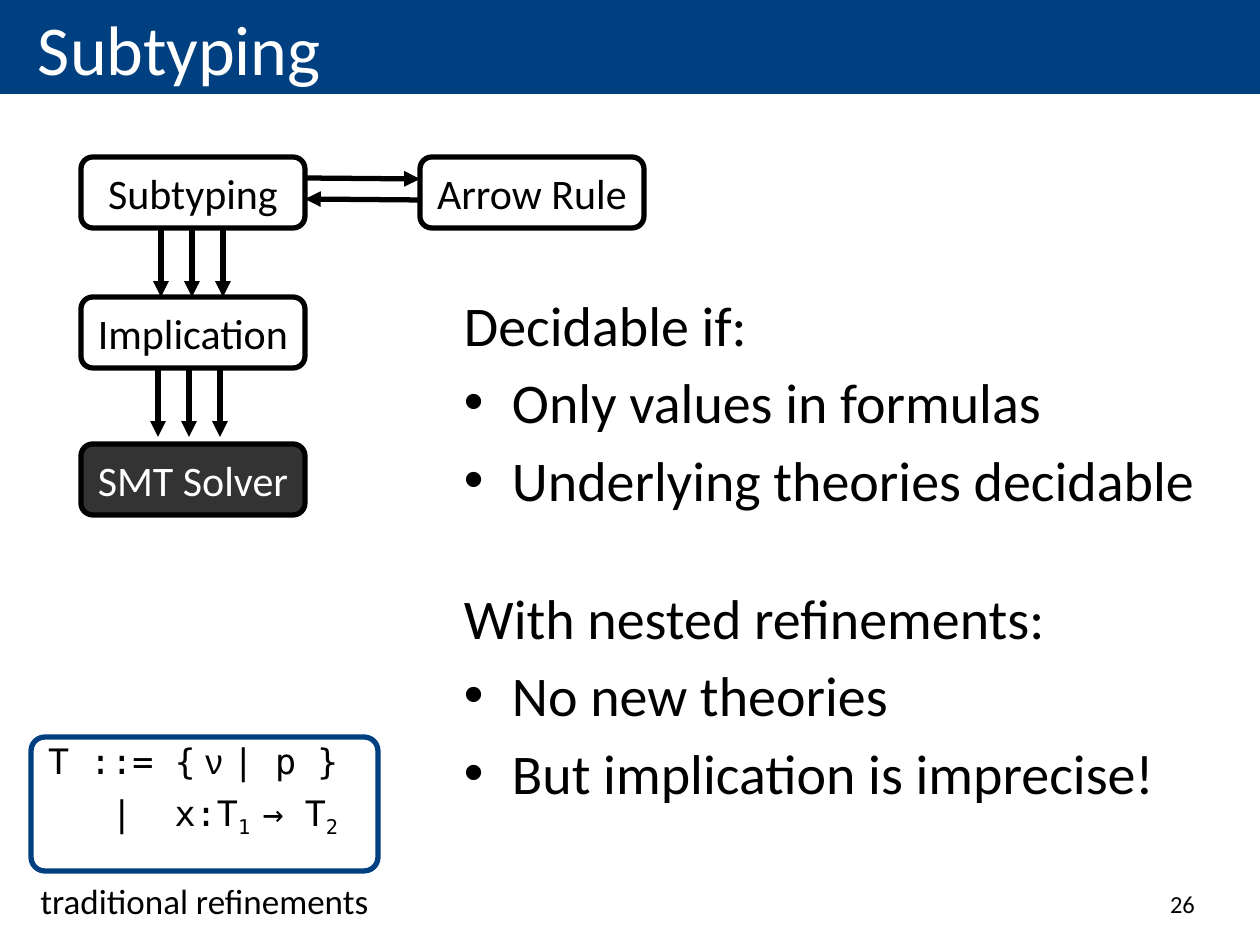
from dataclasses import dataclass

from lxml.etree import SubElement
from pptx import Presentation
from pptx.dml.color import RGBColor as Rgb
from pptx.enum.shapes import MSO_CONNECTOR as Connector, MSO_SHAPE as Shape
from pptx.enum.text import MSO_ANCHOR as Anchor, MSO_AUTO_SIZE as AutoSize, PP_ALIGN as Align
from pptx.oxml.ns import qn
from pptx.util import Emu, Pt

PX_PER_INCH = 126


@dataclass(frozen=True)
class Theme:
    navy: Rgb = Rgb(0x00, 0x40, 0x80)
    black: Rgb = Rgb(0, 0, 0)
    white: Rgb = Rgb(255, 255, 255)
    charcoal: Rgb = Rgb(0x33, 0x33, 0x33)
    sans: str = "Calibri"
    mono: str = "DejaVu Sans Mono"
    symbol: str = "Arial"
    title: int = 40
    body: int = 32
    node: int = 24
    small: int = 20
    number: int = 14
    stroke: int = 3


THEME = Theme()
NODE_WIDTH, NODE_HEIGHT = 224, 71
HANGING = 48


def px(length):
    return Emu(round(length * 914400 / PX_PER_INCH))


def add_span(para, text, size, color=THEME.black, font=THEME.sans, subscript=False):
    span = para.add_run()
    span.text = text
    span.font.size = Pt(size)
    span.font.name = font
    span.font.color.rgb = color
    if subscript:
        span.font._element.set("baseline", "-25000")


def set_frame(frame, anchor=Anchor.TOP, insets=(13, 6, 13, 6), wrap=True):
    frame.auto_size = AutoSize.NONE
    frame.word_wrap = wrap
    frame.vertical_anchor = anchor
    (frame.margin_left, frame.margin_top,
     frame.margin_right, frame.margin_bottom) = map(px, insets)
    return frame


def add_text_box(page, left, top, width, height, **layout):
    box = page.shapes.add_textbox(*map(px, (left, top, width, height)))
    return set_frame(box.text_frame, **layout)


def add_title(page, text):
    title = page.shapes.title
    title.left, title.top, title.width, title.height = map(px, (0, 0, 1260, 94))
    title.fill.solid()
    title.fill.fore_color.rgb = THEME.navy
    para = set_frame(title.text_frame, Anchor.MIDDLE, (38, 6, 13, 6)).paragraphs[0]
    para.alignment = Align.LEFT
    add_span(para, text, THEME.title, THEME.white)


def add_rounded_box(page, left, top, width, height, line, fill=None, corner=0.167):
    box = page.shapes.add_shape(Shape.ROUNDED_RECTANGLE, *map(px, (left, top, width, height)))
    box.shadow.inherit = False
    box.adjustments[0] = corner
    box.line.color.rgb = line
    box.line.width = Pt(THEME.stroke)
    if fill is None:
        box.fill.background()
    else:
        box.fill.solid()
        box.fill.fore_color.rgb = fill
    return box


def add_node(page, text, left, top, fill=None, color=THEME.black):
    box = add_rounded_box(page, left, top, NODE_WIDTH, NODE_HEIGHT, THEME.black, fill)
    para = set_frame(box.text_frame, Anchor.MIDDLE, wrap=False).paragraphs[0]
    para.alignment = Align.CENTER
    add_span(para, text, THEME.node, color)


def add_arrow(page, start, end):
    arrow = page.shapes.add_connector(Connector.STRAIGHT, *map(px, start + end))
    arrow.line.color.rgb = THEME.black
    arrow.line.width = Pt(THEME.stroke)
    SubElement(arrow.line._get_or_add_ln(), qn("a:tailEnd"), type="triangle")
    SubElement(arrow._element.spPr, qn("a:effectLst"))


def add_arrow_trio(page, left, top):
    for x in range(left, left + 3 * 31, 31):
        add_arrow(page, (x, top), (x, top + 69))


def add_bullet_list(page, top, heading, items):
    frame = add_text_box(page, 451, top, 809, 273)
    for index, text in enumerate([heading, *items]):
        para = frame.add_paragraph() if index else frame.paragraphs[0]
        para.space_before = Pt(6)
        props = para._p.get_or_add_pPr()
        props.set("marL", str(px(HANGING)))
        props.set("indent", str(px(-HANGING)))
        if index:
            SubElement(props, qn("a:buFont"), typeface=THEME.symbol)
            SubElement(props, qn("a:buChar"), char="•")
        add_span(para, text, THEME.body)


def add_grammar(page):
    box = add_rounded_box(page, 31, 737, 347, 134, THEME.navy, corner=0.103)
    para = set_frame(box.text_frame, Anchor.MIDDLE, (13, 13, 13, 13)).paragraphs[0]
    para.alignment = Align.LEFT
    para.line_spacing = 1.2
    add_span(para, "T ::= {", THEME.small, font=THEME.mono)
    add_span(para, " ν ", THEME.small, font=THEME.symbol)
    add_span(para, "| p }", THEME.small, font=THEME.mono)
    para.add_line_break()
    for text, subscript in (("   |  x:T", False), ("1 ", True), ("→ T", False), ("2", True)):
        add_span(para, text, THEME.small, font=THEME.mono, subscript=subscript)
    para.add_line_break()


def add_label(page, text, left, top, width, height, size, align, **layout):
    frame = add_text_box(page, left, top, width, height, **layout)
    para = frame.paragraphs[0]
    para.alignment = align
    add_span(para, text, size)
    return para


def main():
    deck = Presentation()
    deck.slide_width, deck.slide_height = px(1260), px(945)
    page = deck.slides.add_slide(deck.slide_layouts[5])
    add_title(page, "Subtyping")
    add_label(page, "26", 903, 861, 305, 63, THEME.number, Align.RIGHT, anchor=Anchor.BOTTOM)

    add_grammar(page)
    caption = add_label(page, "traditional refinements", 31, 863, 347, 60,
                        THEME.small, Align.CENTER, insets=(0, 0, 0, 0))
    caption.line_spacing = 1.4

    add_node(page, "Subtyping", 81, 157)
    add_node(page, "Arrow Rule", 420, 157)
    add_node(page, "Implication", 81, 297)
    add_node(page, "SMT Solver", 81, 444, THEME.charcoal, THEME.white)
    add_arrow(page, (305, 178), (420, 179))
    add_arrow(page, (420, 200), (305, 199))
    add_arrow_trio(page, 161, 228)
    add_arrow_trio(page, 158, 368)

    add_bullet_list(page, 284, "Decidable if:",
                    ["Only values in formulas", "Underlying theories decidable"])
    add_bullet_list(page, 577, "With nested refinements:",
                    ["No new theories", "But implication is imprecise!"])
    deck.save("out.pptx")


if __name__ == "__main__":
    main()
